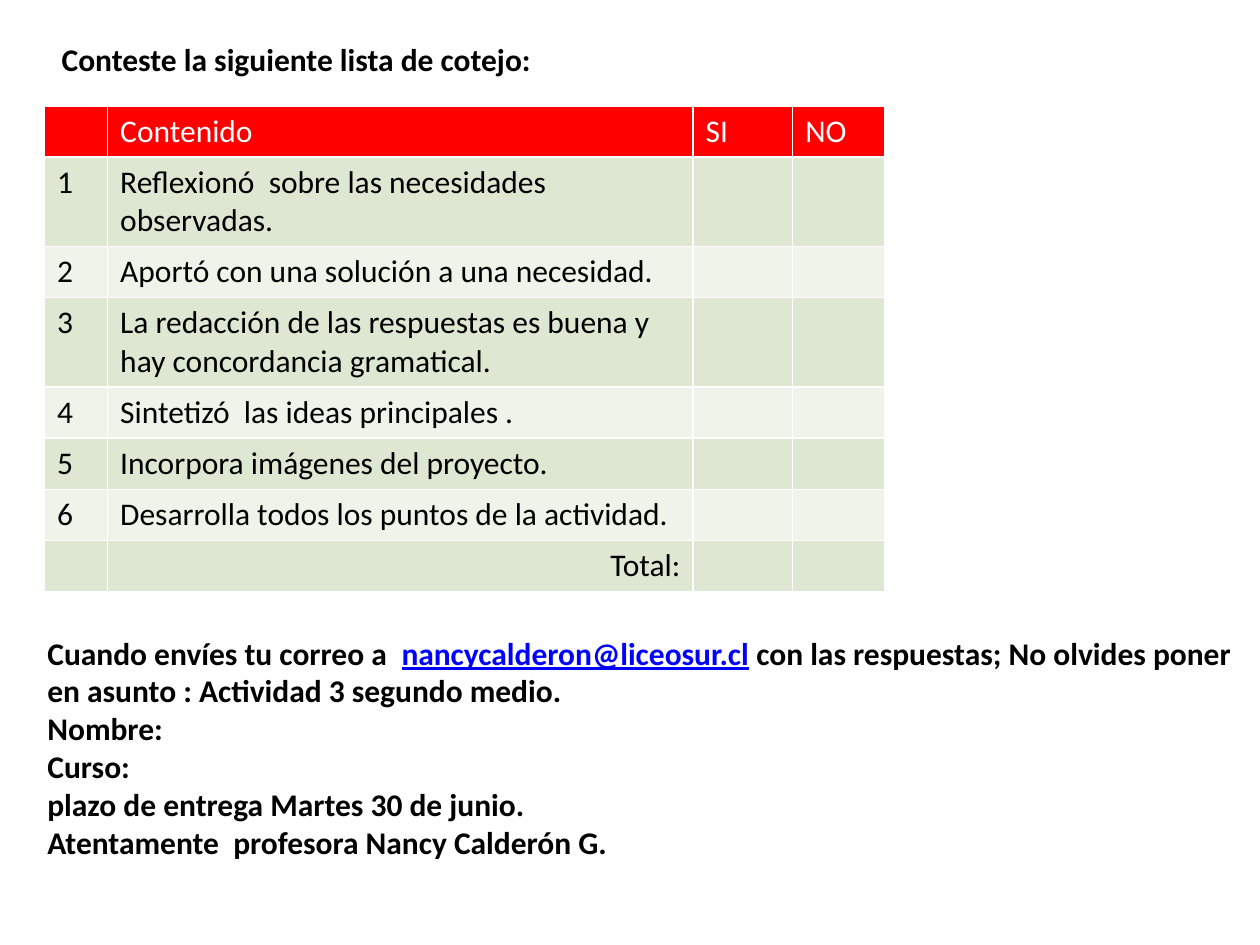
from pptx import Presentation
from pptx import util as u
from pptx.dml.color import RGBColor
from pptx.enum import text

Pt = u.Pt
hues = {"head": "FF0000", "odd": "DEE7D1", "even": "EFF3EA",
        "ink": "000000", "white": "FFFFFF", "mail": "0000FF"}


def style(font, hue, bold):
    font.name = "Calibri"
    font.size = Pt(18)
    font.bold = bold
    font.color.rgb = RGBColor.from_string(hues[hue])


deck = Presentation()
deck.slide_width, deck.slide_height = Pt(720), Pt(540)
slide = deck.slides.add_slide(deck.slide_layouts[5])

title = slide.shapes.title
title.left, title.top, title.width, title.height = Pt(28), Pt(19.5), Pt(294.5), Pt(29)
frame = title.text_frame
frame.text = "Conteste la siguiente lista de cotejo:"
frame.word_wrap = False
frame.auto_size = text.MSO_AUTO_SIZE.NONE
frame.vertical_anchor = text.MSO_ANCHOR.TOP
frame.paragraphs[0].alignment = text.PP_ALIGN.LEFT
style(frame.paragraphs[0].font, "ink", True)

items = ["Reflexionó  sobre las necesidades observadas.",
         "Aportó con una solución a una necesidad.",
         "La redacción de las respuestas es buena y hay concordancia gramatical.",
         "Sintetizó  las ideas principales .",
         "Incorpora imágenes del proyecto.",
         "Desarrolla todos los puntos de la actividad."]
rows = [["", "Contenido", "SI", "NO"]]
rows += [[str(n), item, "", ""] for n, item in enumerate(items, 1)]
rows += [["", "Total:", "", ""]]
widths = [36, 334.5, 57, 52.5]
high = 29.2

grid = slide.shapes.add_table(len(rows), len(widths), Pt(25.5), Pt(60.5),
                              Pt(sum(widths)), Pt(high * len(rows))).table
for col, width in zip(grid.columns, widths):
    col.width = Pt(width)
for r, row in enumerate(rows):
    grid.rows[r].height = Pt(high)
    fill = "head" if r == 0 else "odd" if r % 2 else "even"
    for c, words in enumerate(row):
        cell = grid.cell(r, c)
        cell.text = words
        cell.fill.solid()
        cell.fill.fore_color.rgb = RGBColor.from_string(hues[fill])
        style(cell.text_frame.paragraphs[0].font, "ink" if r else "white", False)
total = grid.cell(len(rows) - 1, 1)
total.text_frame.paragraphs[0].alignment = text.PP_ALIGN.RIGHT

notice = slide.shapes.add_textbox(Pt(20), Pt(358.5), Pt(695), Pt(138)).text_frame
notice.word_wrap = True
first = notice.paragraphs[0]
first.add_run().text = "Cuando envíes tu correo a  "
mail = first.add_run()
mail.text = "nancycalderon@liceosur.cl"
first.add_run().text = (" con las respuestas; No olvides poner en asunto : "
                        "Actividad 3 segundo medio.")
for words in ["Nombre:", "Curso:",
              "plazo de entrega Martes 30 de junio.\vAtentamente  profesora Nancy Calderón G."]:
    notice.add_paragraph().text = words
for para in notice.paragraphs:
    style(para.font, "ink", True)
mail.font.color.rgb = RGBColor.from_string(hues["mail"])
mail.font.underline = True

deck.save("out.pptx")
